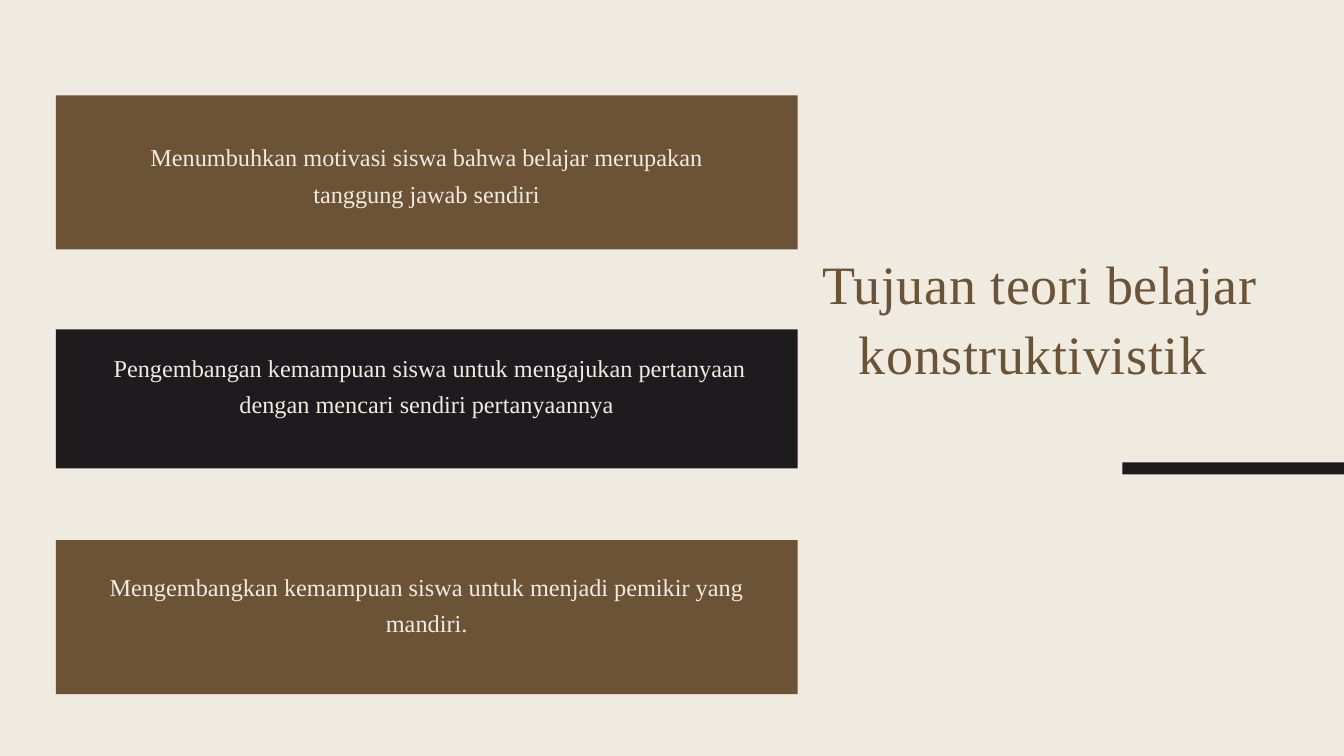
from pptx import Presentation
from pptx.dml.color import RGBColor
from pptx.enum import shapes, text
from pptx.util import Cm, Pt

COLOURS = {"cream": "EFEBE0", "brown": "6C5336", "dark": "1D1B1E"}
FONT = "Times New Roman"
SLIDE_WIDTH, SLIDE_HEIGHT = 50.8, 28.58
CARD_LEFT, CARD_WIDTH = 2.11, 28.04
BAR_WIDTH = 8.38

TITLE = "Tujuan teori belajar konstruktivistik "
GOALS = [
    {"words": "Menumbuhkan motivasi siswa bahwa belajar merupakan tanggung jawab sendiri",
     "fill": "brown", "top": 3.61, "height": 5.82,
     "text_top": 5.11, "text_width": 23.65, "text_height": 4.06},
    {"words": " Pengembangan kemampuan siswa untuk mengajukan pertanyaan dengan mencari sendiri pertanyaannya",
     "fill": "dark", "top": 12.45, "height": 5.26,
     "text_top": 13.08, "text_width": 24.87, "text_height": 5.44},
    {"words": "Mengembangkan kemampuan siswa untuk menjadi pemikir yang mandiri.",
     "fill": "brown", "top": 20.42, "height": 5.82,
     "text_top": 21.34, "text_width": 24.87, "text_height": 5.44},
]


def colour(name):
    return RGBColor.from_string(COLOURS[name])


def add_block(slide, left, top, width, height, fill):
    shape = slide.shapes.add_shape(
        shapes.MSO_SHAPE.RECTANGLE, Cm(left), Cm(top), Cm(width), Cm(height))
    shape.shadow.inherit = False
    shape.fill.solid()
    shape.fill.fore_color.rgb = colour(fill)
    shape.line.fill.background()


def write(shape, words, size, line, font_colour, tracking=0):
    frame = shape.text_frame
    frame.word_wrap = True
    frame.auto_size = text.MSO_AUTO_SIZE.NONE
    frame.vertical_anchor = text.MSO_ANCHOR.TOP
    frame.margin_left = frame.margin_right = frame.margin_top = frame.margin_bottom = 0
    paragraph = frame.paragraphs[0]
    paragraph.alignment = text.PP_ALIGN.CENTER
    paragraph.line_spacing = Pt(line)
    run = paragraph.add_run()
    run.text = words
    run.font.name = FONT
    run.font.size = Pt(size)
    run.font.color.rgb = colour(font_colour)
    if tracking:
        run.font._element.set("spc", str(round(tracking * 100)))


def main():
    presentation = Presentation()
    presentation.slide_width = Cm(SLIDE_WIDTH)
    presentation.slide_height = Cm(SLIDE_HEIGHT)
    slide = presentation.slides.add_slide(presentation.slide_layouts[5])
    slide.background.fill.solid()
    slide.background.fill.fore_color.rgb = colour("cream")

    title = slide.shapes.title
    title.left, title.top, title.width, title.height = map(Cm, (30.18, 9.27, 18.26, 13.11))
    write(title, TITLE, size=57.9, line=75.3, font_colour="brown", tracking=0.6)
    add_block(slide, SLIDE_WIDTH - BAR_WIDTH, 17.48, BAR_WIDTH, 0.46, "dark")

    for goal in GOALS:
        add_block(slide, CARD_LEFT, goal["top"], CARD_WIDTH, goal["height"], goal["fill"])
        text_left = CARD_LEFT + (CARD_WIDTH - goal["text_width"]) / 2
        box = slide.shapes.add_textbox(
            Cm(text_left), Cm(goal["text_top"]),
            Cm(goal["text_width"]), Cm(goal["text_height"]))
        write(box, goal["words"], size=26, line=39, font_colour="cream")

    presentation.save("out.pptx")


if __name__ == "__main__":
    main()
